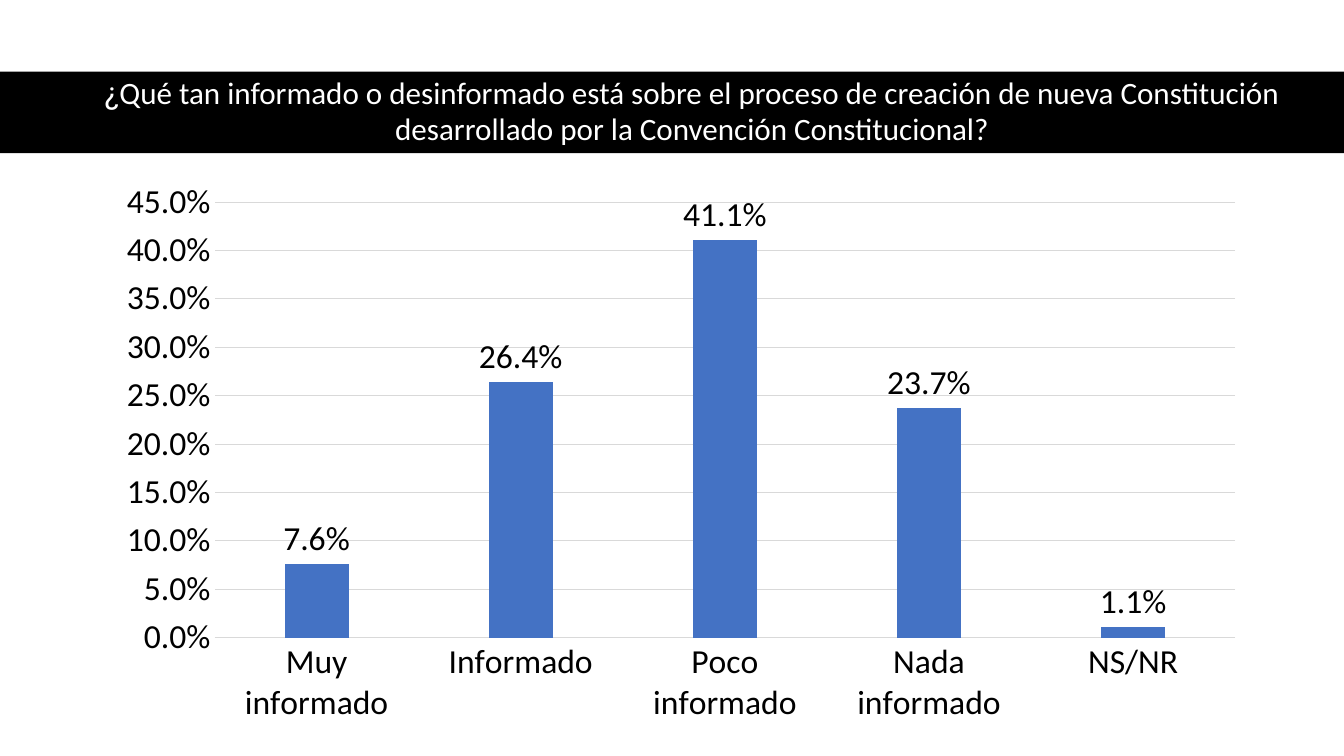
"""Build a survey slide with a black title band and a column chart."""
from pptx import Presentation
from pptx.chart.data import CategoryChartData
from pptx.dml.color import RGBColor
from pptx.enum.chart import XL_CHART_TYPE, XL_LABEL_POSITION, XL_TICK_MARK
from pptx.enum.shapes import MSO_SHAPE
from pptx.enum.text import MSO_ANCHOR, MSO_AUTO_SIZE, PP_ALIGN
from pptx.util import Inches, Pt

QUESTION = [
    ("¿", "Roboto"),
    ("Qué tan informado o desinformado está sobre el proceso de creación de nueva "
     "Constitución desarrollado por la Convención Constitucional?", "Calibri"),
]
ANSWERS = {
    "Muy informado": 0.076,
    "Informado": 0.264,
    "Poco informado": 0.411,
    "Nada informado": 0.237,
    "NS/NR": 0.011,
}
BAND_BOX = (0, 0.71, 13.33, 0.81)
TITLE_BOX = (0.61, 0.7, 12.26, 0.81)
CHART_BOX = (1.03, 1.69, 11.45, 5.6)
BLACK, WHITE, BLUE, GREY = "000000", "FFFFFF", "4472C4", "D9D9D9"
PERCENT = "0.0%"


def paint(color_format, value):
    color_format.rgb = RGBColor.from_string(value)


def style_font(font, name, size, color):
    font.name, font.size, font.bold = name, Pt(size), False
    paint(font.color, color)


def style_line(line):
    line.width = Pt(0.75)
    line.fill.solid()
    paint(line.color, GREY)


def add_band(s):
    band = s.shapes.add_shape(MSO_SHAPE.RECTANGLE, *map(Inches, BAND_BOX))
    band.shadow.inherit = False
    band.fill.solid()
    paint(band.fill.fore_color, BLACK)
    band.line.fill.background()
    return band


def set_title(title):
    title.left, title.top, title.width, title.height = map(Inches, TITLE_BOX)
    tf = title.text_frame
    tf.word_wrap = True
    tf.auto_size = MSO_AUTO_SIZE.NONE
    tf.vertical_anchor = MSO_ANCHOR.MIDDLE
    p = tf.paragraphs[0]
    p.alignment = PP_ALIGN.CENTER
    p.line_spacing = 0.97
    p.space_before, p.space_after = Pt(0), Pt(8)
    pPr = p._p.get_or_add_pPr()
    pPr.set("marL", str(Inches(0.25)))
    pPr.set("indent", "0")
    for text, font_name in QUESTION:
        r = p.add_run()
        r.text = text
        style_font(r.font, font_name, 22.2, WHITE)


def add_answers_chart(s):
    data = CategoryChartData(number_format=PERCENT)
    data.categories = list(ANSWERS)
    data.add_series("Series 1", list(ANSWERS.values()))
    chart = s.shapes.add_chart(
        XL_CHART_TYPE.COLUMN_CLUSTERED, *map(Inches, CHART_BOX), data).chart
    chart.has_legend = chart.has_title = False
    style_font(chart.font, "Calibri", 24, BLACK)

    for axis in (chart.category_axis, chart.value_axis):
        axis.major_tick_mark = axis.minor_tick_mark = XL_TICK_MARK.NONE
        style_font(axis.tick_labels.font, "Calibri", 24, BLACK)
    style_line(chart.category_axis.format.line)
    value_axis = chart.value_axis
    value_axis.minimum_scale, value_axis.maximum_scale = 0, 0.45
    value_axis.major_unit = 0.05
    value_axis.format.line.fill.background()
    style_line(value_axis.major_gridlines.format.line)
    value_axis.tick_labels.number_format = PERCENT
    value_axis.tick_labels.number_format_is_linked = False

    plot = chart.plots[0]
    plot.vary_by_categories = False
    plot.gap_width, plot.overlap = 219, -27
    series = plot.series[0]
    series.format.fill.solid()
    paint(series.format.fill.fore_color, BLUE)
    labels = series.data_labels
    labels.show_value = True
    labels.position = XL_LABEL_POSITION.OUTSIDE_END
    labels.number_format = PERCENT
    labels.number_format_is_linked = False
    style_font(labels.font, "Calibri", 24, BLACK)


def main():
    prs = Presentation()
    prs.slide_width, prs.slide_height = Inches(13.33), Inches(7.5)
    s = prs.slides.add_slide(prs.slide_layouts[5])
    title = s.shapes.title
    set_title(title)
    band = add_band(s)
    band.element.addnext(title.element)
    add_answers_chart(s)
    prs.save("out.pptx")


if __name__ == "__main__":
    main()
